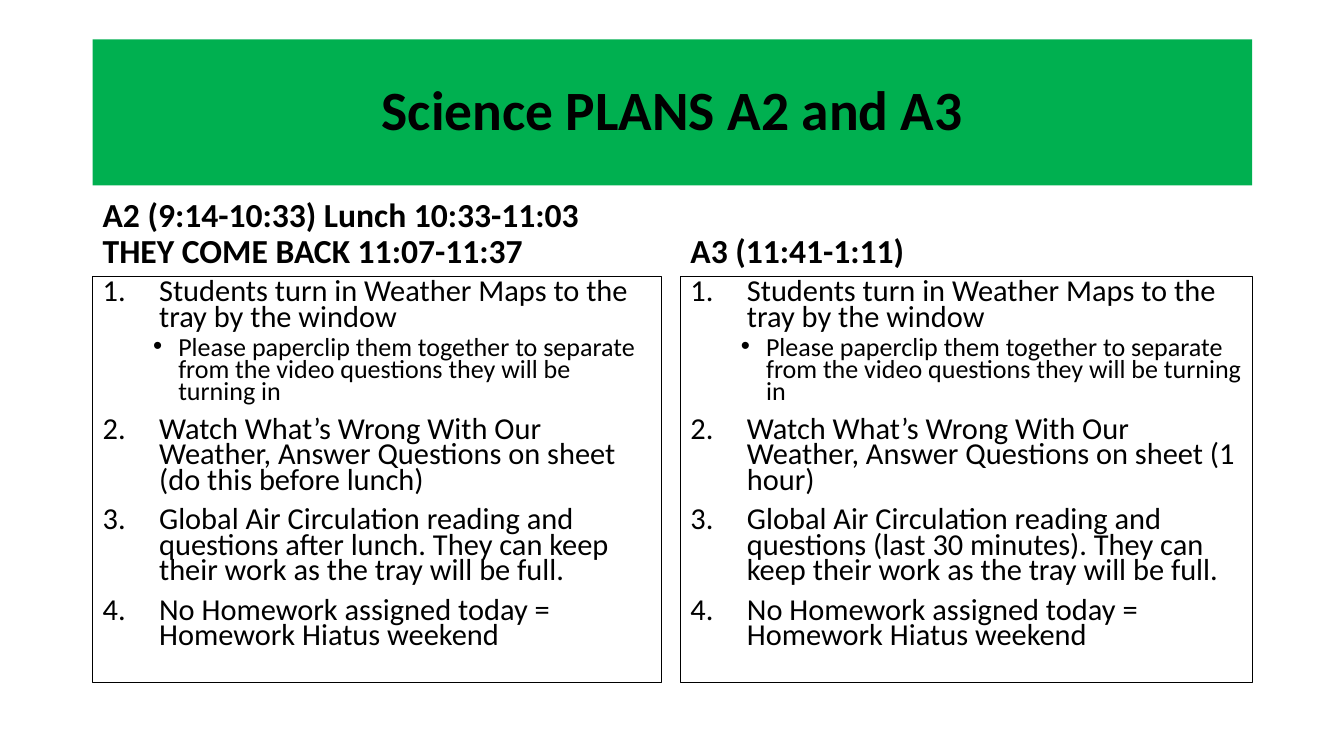
from dataclasses import dataclass

from lxml.etree import SubElement
from pptx import Presentation
from pptx.dml.color import RGBColor as RGB
from pptx.enum.shapes import MSO_SHAPE as Shape
from pptx.enum.text import MSO_ANCHOR as Anchor, PP_ALIGN as Align
from pptx.oxml.ns import qn
from pptx.util import Inches, Pt


@dataclass(frozen=True)
class Theme:
    font: str = "Calibri"
    ink: RGB = RGB(0, 0, 0)
    green: RGB = RGB(0, 0xB0, 0x50)
    title: float = 39.6
    head: float = 24
    step: float = 21.7
    note: float = 18.6


THEME = Theme()

# Layout
LEFT, WIDE = 0.92, 11.5
TOP, HEAD_Y, LIST_Y = 0.39, 1.84, 2.74
LIST_H = 4.03

# Each column: left, width, heading, and (level, text) items
TURN_IN = [
    (0, "Students turn in Weather Maps to the tray by the window"),
    (1, "Please paperclip them together to separate from the video questions "
        "they will be turning in"),
]
WATCH = "Watch What’s Wrong With Our Weather, Answer Questions on sheet "
READ = "Global Air Circulation reading and questions "
KEEP = "They can keep their work as the tray will be full."
HOME = "No Homework assigned today = Homework Hiatus weekend"


def plan(watch, read):
    return TURN_IN + [(0, WATCH + watch), (0, f"{READ}{read} {KEEP}"), (0, HOME)]


COLUMNS = [
    (LEFT, 5.64, "A2 (9:14-10:33) Lunch 10:33-11:03 THEY COME BACK 11:07-11:37",
     plan("(do this before lunch)", "after lunch.")),
    (6.75, 5.67, "A3 (11:41-1:11)",
     plan("(1 hour)", "(last 30 minutes).")),
]


def add_run(para, text, size, bold=False):
    run = para.add_run()
    run.text = text
    font = run.font
    font.name, font.size, font.bold = THEME.font, Pt(size), bold
    font.color.rgb = THEME.ink


def add_box(slide, x, y, w, h, fill=None, line=None):
    box = slide.shapes.add_shape(
        Shape.RECTANGLE, Inches(x), Inches(y), Inches(w), Inches(h))
    box.shadow.inherit = False
    if fill is None:
        box.fill.background()
    else:
        box.fill.solid()
        box.fill.fore_color.rgb = fill
    if line is None:
        box.line.fill.background()
    else:
        box.line.color.rgb = line
        box.line.width = Pt(0.75)
    box.text_frame.word_wrap = True
    return box.text_frame


def add_title(slide, text):
    frame = add_box(slide, LEFT, TOP, WIDE, HEAD_Y - TOP, fill=THEME.green)
    frame.vertical_anchor = Anchor.MIDDLE
    para = frame.paragraphs[0]
    para.alignment, para.line_spacing = Align.CENTER, 0.9
    add_run(para, text, THEME.title, bold=True)


def add_head(slide, x, w, text):
    box = slide.shapes.add_textbox(
        Inches(x), Inches(HEAD_Y), Inches(w), Inches(LIST_Y - HEAD_Y))
    frame = box.text_frame
    frame.word_wrap, frame.vertical_anchor = True, Anchor.BOTTOM
    para = frame.paragraphs[0]
    para.line_spacing, para.space_before = 0.9, Pt(10)
    add_run(para, text, THEME.head, bold=True)


def set_mark(para, level):
    """Number the steps and put a bullet on the notes below them."""
    left, hang = (0.75, 0.25) if level else (0.56, 0.56)
    props = para._p.get_or_add_pPr()
    props.set("marL", str(Inches(left)))
    props.set("indent", str(-Inches(hang)))
    if level:
        SubElement(props, qn("a:buFont"), typeface="Arial")
        SubElement(props, qn("a:buChar"), char="•")
    else:
        SubElement(props, qn("a:buFont"), typeface="+mj-lt")
        SubElement(props, qn("a:buAutoNum"), type="arabicPeriod")


def add_list(slide, x, w, items):
    frame = add_box(slide, x, LIST_Y, w, LIST_H, line=THEME.ink)
    frame.vertical_anchor = Anchor.TOP
    for i, (level, text) in enumerate(items):
        para = frame.add_paragraph() if i else frame.paragraphs[0]
        para.level, para.alignment = level, Align.LEFT
        para.line_spacing = 0.7
        para.space_before = Pt(5 if level else 10)
        set_mark(para, level)
        add_run(para, text, THEME.note if level else THEME.step)


def main():
    deck = Presentation()
    deck.slide_width, deck.slide_height = Inches(13.33), Inches(7.5)
    slide = deck.slides.add_slide(deck.slide_layouts[6])

    # Banner
    add_title(slide, "Science PLANS A2 and A3")

    # Class columns
    for x, w, head, items in COLUMNS:
        add_head(slide, x, w, head)
        add_list(slide, x, w, items)

    deck.save("out.pptx")


if __name__ == "__main__":
    main()
